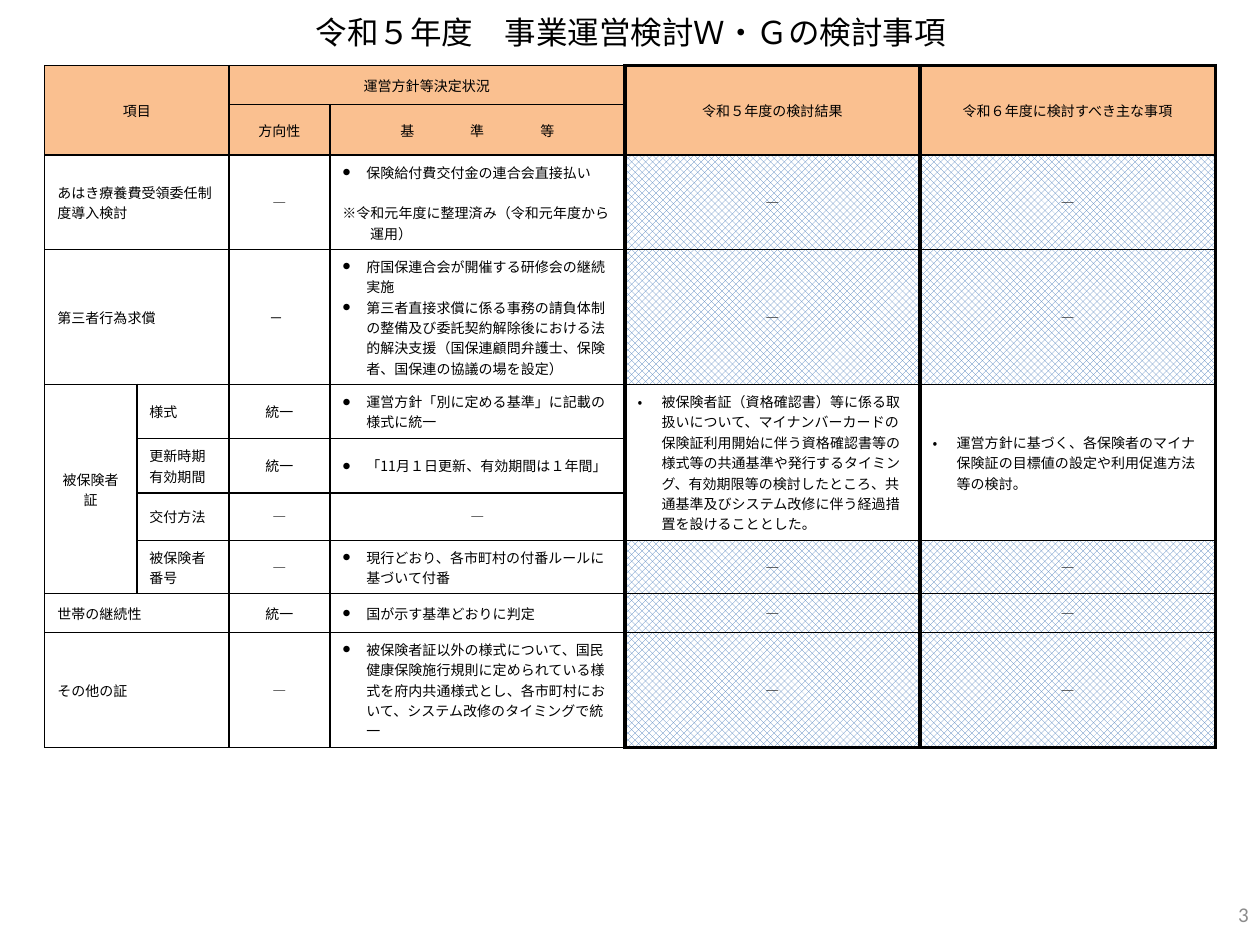
from dataclasses import dataclass

from lxml import etree
from pptx import Presentation
from pptx.dml.color import RGBColor
from pptx.enum.dml import MSO_PATTERN
from pptx.enum.text import MSO_ANCHOR, PP_ALIGN
from pptx.oxml.ns import qn
from pptx.util import Inches, Pt

LEFT, CENTER, RIGHT = PP_ALIGN.LEFT, PP_ALIGN.CENTER, PP_ALIGN.RIGHT
MIDDLE = MSO_ANCHOR.MIDDLE
DIAMOND = MSO_PATTERN.from_xml("openDmnd")


@dataclass(frozen=True)
class Theme:
    text: str = "000000"
    number: str = "8C8C8C"
    header: str = "FAC090"
    hatch: str = "4F81BD"
    paper: str = "FFFFFF"
    font: str = "Noto Sans CJK JP"
    latin_font: str = "Calibri"
    title_size: float = 18
    body_size: float = 8
    number_size: float = 12
    thin: float = 1
    heavy: float = 2.25


@dataclass(frozen=True)
class Box:
    left: int
    top: int
    width: int
    height: int


@dataclass(frozen=True)
class ParagraphStyle:
    align: PP_ALIGN = LEFT
    bullet: str = ""
    bullet_font: str = ""
    margin: float = 0
    hanging: float = 0
    before: float = 0
    tracking: int = 0


THEME = Theme()
PLAIN = ParagraphStyle()
MID = ParagraphStyle(CENTER)
SPREAD = ParagraphStyle(CENTER, tracking=3200)
BULLET = ParagraphStyle(LEFT, "●", THEME.latin_font, 0.19, 0.19)
DOT = ParagraphStyle(LEFT, "•", THEME.font, 0.19, 0.19)
NOTE = ParagraphStyle(before=11.6)
INDENTED = ParagraphStyle(margin=0.22)

COLUMNS = (0.73, 0.73, 0.8, 2.34, 2.34, 2.34)
ROWS = (0.31, 0.4, 0.75, 1.07, 0.43, 0.43, 0.38, 0.42, 0.31, 0.91)
HEADER_ROWS = 2
FIRST_REVIEW_COLUMN = 4
DASH = "―"

SPANS = {
    (0, 0): (2, 2), (0, 2): (1, 2), (0, 4): (2, 1), (0, 5): (2, 1),
    (2, 0): (1, 2), (3, 0): (1, 2), (4, 0): (4, 1), (4, 4): (3, 1),
    (4, 5): (3, 1), (8, 0): (1, 2), (9, 0): (1, 2),
}

CELLS = {
    (0, 0): [(MID, "項目")],
    (0, 2): [(MID, "運営方針等決定状況")],
    (0, 4): [(MID, "令和５年度の検討結果")],
    (0, 5): [(MID, "令和６年度に検討すべき主な事項")],
    (1, 2): [(MID, "方向性")],
    (1, 3): [(SPREAD, "基準等")],
    (2, 0): [(PLAIN, "あはき療養費受領委任制度導入検討")],
    (2, 3): [(BULLET, "保険給付費交付金の連合会直接払い"),
             (NOTE, "※令和元年度に整理済み（令和元年度から"),
             (INDENTED, "運用）")],
    (3, 0): [(PLAIN, "第三者行為求償")],
    (3, 2): [(INDENTED, "－")],
    (3, 3): [(BULLET, "府国保連合会が開催する研修会の継続実施"),
             (BULLET, "第三者直接求償に係る事務の請負体制の整備及び委託契約解除後における"
                      "法的解決支援（国保連顧問弁護士、保険者、国保連の協議の場を設定）")],
    (4, 0): [(MID, "被保険者証")],
    (4, 1): [(PLAIN, "様式")],
    (4, 2): [(MID, "統一")],
    (4, 3): [(BULLET, "運営方針「別に定める基準」に記載の様式に統一")],
    (4, 4): [(DOT, "被保険者証（資格確認書）等に係る取扱いについて、マイナンバーカードの"
                   "保険証利用開始に伴う資格確認書等の様式等の共通基準や発行するタイミング、"
                   "有効期限等の検討したところ、共通基準及びシステム改修に伴う経過措置を"
                   "設けることとした。")],
    (4, 5): [(DOT, "運営方針に基づく、各保険者のマイナ保険証の目標値の設定や"
                   "利用促進方法等の検討。")],
    (5, 1): [(PLAIN, "更新時期"), (PLAIN, "有効期間")],
    (5, 2): [(MID, "統一")],
    (5, 3): [(BULLET, "「11月１日更新、有効期間は１年間」")],
    (6, 1): [(PLAIN, "交付方法")],
    (7, 1): [(PLAIN, "被保険者番号")],
    (7, 3): [(BULLET, "現行どおり、各市町村の付番ルールに基づいて付番")],
    (8, 0): [(PLAIN, "世帯の継続性")],
    (8, 2): [(MID, "統一")],
    (8, 3): [(BULLET, "国が示す基準どおりに判定")],
    (9, 0): [(PLAIN, "その他の証")],
    (9, 3): [(BULLET, "被保険者証以外の様式について、国民健康保険施行規則に定められている"
                      "様式を府内共通様式とし、各市町村において、システム改修の"
                      "タイミングで統一")],
}


def percent_box(prs, left, top, width, height):
    w, h = prs.slide_width / 100, prs.slide_height / 100
    return Box(int(w * left), int(h * top), int(w * width), int(h * height))


def format_run(r, size, color, font):
    r.font.size = Pt(size)
    r.font.name = font
    r.font.color.rgb = RGBColor.from_string(color)
    etree.SubElement(r.font._element, qn("a:ea"), typeface=font)


def add_line(s, box, text, align, size, color, font):
    sp = s.shapes.add_textbox(box.left, box.top, box.width, box.height)
    tf = sp.text_frame
    tf.word_wrap = True
    tf.vertical_anchor = MIDDLE
    p = tf.paragraphs[0]
    p.text = text
    p.alignment = align
    format_run(p.runs[0], size, color, font)


def add_title(s, box):
    add_line(s, box, "令和５年度　事業運営検討Ｗ・Ｇの検討事項", CENTER,
             THEME.title_size, THEME.text, THEME.font)


def add_page_number(s, box):
    add_line(s, box, "3", RIGHT, THEME.number_size, THEME.number, THEME.latin_font)


def fill_paragraph(p, style, text):
    p.alignment = style.align
    if style.tracking:
        p.add_run().text = text[:-1]
        p.add_run().text = text[-1]
        p.runs[0].font._element.set("spc", str(style.tracking))
    else:
        p.text = text
    if style.before:
        p.space_before = Pt(style.before)
    pPr = p._p.get_or_add_pPr()
    pPr.set("marL", str(Inches(style.margin)))
    pPr.set("indent", str(-Inches(style.hanging)))
    if style.bullet:
        etree.SubElement(pPr, qn("a:buFont"), typeface=style.bullet_font)
        etree.SubElement(pPr, qn("a:buChar"), char=style.bullet)
    for r in p.runs:
        format_run(r, THEME.body_size, THEME.text, THEME.font)


def add_borders(cell, row, col):
    last_col = col + cell.span_width - 1
    last_row = row + cell.span_height - 1
    review = col >= FIRST_REVIEW_COLUMN
    heavy = {
        "L": review,
        "R": last_col >= FIRST_REVIEW_COLUMN - 1,
        "T": review and row == 0,
        "B": review and last_row == len(ROWS) - 1,
    }
    tcPr = cell._tc.get_or_add_tcPr()
    for side, is_heavy in heavy.items():
        width = Pt(THEME.heavy if is_heavy else THEME.thin)
        ln = etree.SubElement(tcPr, qn(f"a:ln{side}"), w=str(width))
        fill = etree.SubElement(ln, qn("a:solidFill"))
        etree.SubElement(fill, qn("a:srgbClr"), val=THEME.text)


def fill_cell(cell, row, col, paragraphs):
    if row < HEADER_ROWS:
        cell.fill.solid()
        cell.fill.fore_color.rgb = RGBColor.from_string(THEME.header)
    elif col >= FIRST_REVIEW_COLUMN and paragraphs[0][1] == DASH:
        cell.fill.patterned()
        cell.fill.pattern = DIAMOND
        cell.fill.fore_color.rgb = RGBColor.from_string(THEME.hatch)
        cell.fill.back_color.rgb = RGBColor.from_string(THEME.paper)
    else:
        cell.fill.background()
    cell.vertical_anchor = MIDDLE
    tf = cell.text_frame
    for i, (style, text) in enumerate(paragraphs):
        p = tf.add_paragraph() if i else tf.paragraphs[0]
        fill_paragraph(p, style, text)


def add_review_table(s, box):
    table = s.shapes.add_table(len(ROWS), len(COLUMNS), box.left, box.top,
                               box.width, box.height).table
    table.first_row = table.horz_banding = False
    for column, part in zip(table.columns, COLUMNS):
        column.width = int(box.width * part / sum(COLUMNS))
    for table_row, part in zip(table.rows, ROWS):
        table_row.height = int(box.height * part / sum(ROWS))
    for (row, col), (down, across) in SPANS.items():
        table.cell(row, col).merge(table.cell(row + down - 1, col + across - 1))
    for row in range(len(ROWS)):
        for col in range(len(COLUMNS)):
            cell = table.cell(row, col)
            add_borders(cell, row, col)
            if not cell.is_spanned:
                fill_cell(cell, row, col, CELLS.get((row, col), [(MID, DASH)]))


def main():
    prs = Presentation()
    prs.slide_width, prs.slide_height = Inches(10), Inches(7.5)
    s = prs.slides.add_slide(prs.slide_layouts[6])
    add_title(s, percent_box(prs, 2, 0.2, 96.1, 6.4))
    add_review_table(s, percent_box(prs, 3.55, 6.95, 92.9, 72.15))
    add_page_number(s, percent_box(prs, 76.8, 94.1, 23.3, 5.3))
    prs.save("out.pptx")


if __name__ == "__main__":
    main()
